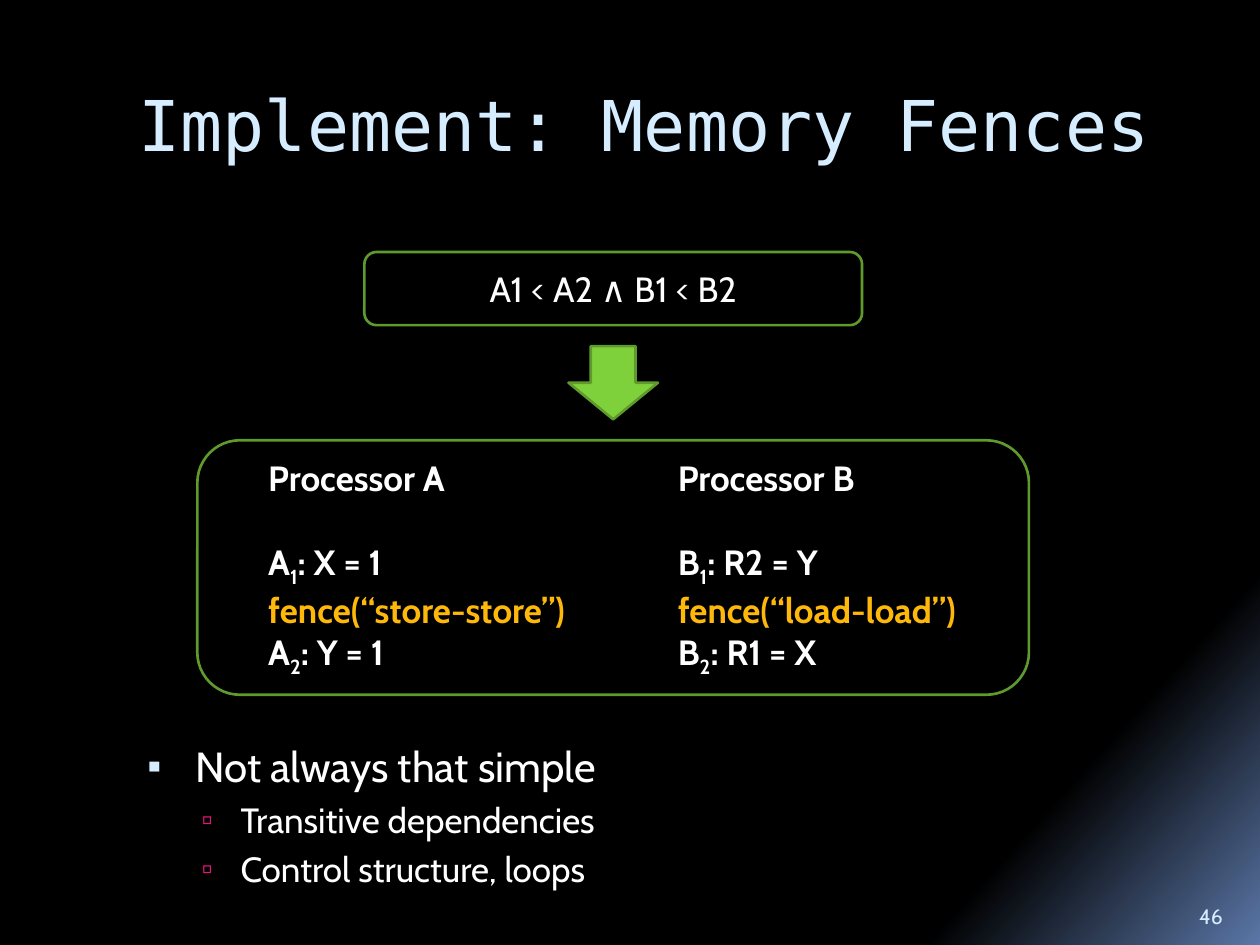
from lxml.etree import SubElement
from pptx import Presentation
from pptx.dml.color import RGBColor
from pptx.enum.shapes import MSO_SHAPE
from pptx.enum.text import MSO_ANCHOR, MSO_AUTO_SIZE, PP_ALIGN
from pptx.oxml.ns import qn
from pptx.util import Pt

COLORS = {
    "black": "000000", "glow": "5B77A8", "ice": "D6ECFF", "white": "FFFFFF",
    "amber": "FEB80A", "green": "7FD13B", "border": "5E9B2C", "pink": "EA157A",
}
BODY_FONT, TITLE_FONT = "Cabin", "DejaVu Sans Mono"

TITLE = "Implement: Memory Fences"
ORDERING = "A1 < A2 ∧ B1 < B2"
PAGE = "46"
PROCESSORS = [
    {"name": "B", "first": "R2 = Y", "fence": "load-load", "second": "R1 = X",
     "left": 380.2, "width": 174.2},
    {"name": "A", "first": "X = 1", "fence": "store-store", "second": "Y = 1",
     "left": 146.2, "width": 203.8},
]
CAVEATS = [
    (0, "Not always that simple"),
    (1, "Transitive dependencies"),
    (1, "Control structure, loops"),
]
BULLETS = [
    {"char": "▪", "color": "ice", "scale": 95, "margin": 32.4, "indent": -27.4, "size": 24, "before": 7},
    {"char": "▫", "color": "pink", "scale": 90, "margin": 58.3, "indent": -22.3, "size": 20, "before": 4},
]
CENTER, STACK_TOP, GAP = 350.4, 144, 12
ORDERING_SIZE, ARROW_SIZE, CODE_SIZE = (284.4, 41.8), (51.1, 41.8), (475.2, 145.4)
CODE_INSET = 5.8


def rgb(name):
    return RGBColor.from_string(COLORS[name])


def style(paragraph, size, color="white", face=BODY_FONT, bold=False):
    font = paragraph.font
    font.size, font.name, font.bold = Pt(size), face, bold
    font.color.rgb = rgb(color)


def place(shape, left, top, width, height):
    shape.left, shape.top, shape.width, shape.height = map(Pt, (left, top, width, height))


def add_outlined(shapes, preset, top, size, fill=None):
    width, height = size
    outlined = shapes.add_shape(preset, Pt(CENTER - width / 2), Pt(top), Pt(width), Pt(height))
    outlined.shadow.inherit = False
    if fill:
        outlined.fill.solid()
        outlined.fill.fore_color.rgb = rgb(fill)
    else:
        outlined.fill.background()
    outlined.line.color.rgb = rgb("border")
    outlined.line.width = Pt(1.5)
    return outlined


def add_statement(paragraph, processor, index, code):
    for text, baseline in ((processor, 0), (index, -25000), (f": {code}", 0)):
        run = paragraph.add_run()
        run.text = text
        if baseline:
            run.font._element.set("baseline", str(baseline))


def add_processor(shapes, processor, top):
    listing = shapes.add_textbox(Pt(processor["left"]), Pt(top), Pt(processor["width"]), Pt(128.2))
    frame = listing.text_frame
    frame.word_wrap = True
    heading = frame.paragraphs[0]
    first, fence, second = (frame.add_paragraph() for _ in range(3))
    heading.text = f"Processor {processor['name']}"
    first.space_before = Pt(24)
    add_statement(first, processor["name"], "1", processor["first"])
    fence.text = f"fence(“{processor['fence']}”)"
    add_statement(second, processor["name"], "2", processor["second"])
    for paragraph in (heading, first, fence, second):
        style(paragraph, 20, "amber" if paragraph is fence else "white", bold=True)


def add_bullet(paragraph, bullet):
    paragraph.space_before = Pt(bullet["before"])
    properties = paragraph._p.get_or_add_pPr()
    properties.set("marL", str(Pt(bullet["margin"])))
    properties.set("indent", str(Pt(bullet["indent"])))
    color = SubElement(properties, qn("a:buClr"))
    SubElement(color, qn("a:srgbClr"), val=COLORS[bullet["color"]])
    SubElement(properties, qn("a:buSzPct"), val=str(bullet["scale"] * 1000))
    SubElement(properties, qn("a:buChar"), char=bullet["char"])


def main():
    """Build the memory fences slide."""
    deck = Presentation()
    deck.slide_width, deck.slide_height = Pt(720), Pt(540)
    slide = deck.slides.add_slide(deck.slide_layouts[1])
    shapes = slide.shapes

    backdrop = slide.background.fill
    backdrop.gradient()
    backdrop.gradient_angle = 318
    for stop, (position, color) in zip(backdrop.gradient_stops, ((0.84, "black"), (1, "glow"))):
        stop.position = position
        stop.color.rgb = rgb(color)

    title, caveats = shapes.title, slide.placeholders[1]
    place(title, 72, 40.3, 612, 72)
    title.text_frame.text = TITLE
    title.text_frame.vertical_anchor = MSO_ANCHOR.TOP
    title.text_frame.margin_top = Pt(6.5)
    title.text_frame.auto_size = MSO_AUTO_SIZE.NONE
    heading = title.text_frame.paragraphs[0]
    heading.alignment = PP_ALIGN.LEFT
    style(heading, 40, "ice", TITLE_FONT)

    page = shapes.add_textbox(Pt(678.2), Pt(505.4), Pt(36), Pt(28.8)).text_frame
    page.word_wrap = True
    page.vertical_anchor = MSO_ANCHOR.BOTTOM
    page.text = PAGE
    style(page.paragraphs[0], 12, "ice")

    arrow_top = STACK_TOP + ORDERING_SIZE[1] + GAP
    code_top = arrow_top + ARROW_SIZE[1] + GAP
    code = shapes.add_group_shape()
    for processor in PROCESSORS:
        add_processor(code.shapes, processor, code_top + CODE_INSET)
    add_outlined(code.shapes, MSO_SHAPE.ROUNDED_RECTANGLE, code_top, CODE_SIZE)
    ordering = add_outlined(shapes, MSO_SHAPE.ROUNDED_RECTANGLE, STACK_TOP, ORDERING_SIZE).text_frame
    ordering.text = ORDERING
    ordering.vertical_anchor = MSO_ANCHOR.MIDDLE
    ordering.paragraphs[0].alignment = PP_ALIGN.CENTER
    style(ordering.paragraphs[0], 20)
    add_outlined(shapes, MSO_SHAPE.DOWN_ARROW, arrow_top, ARROW_SIZE, "green")

    place(caveats, 72, 419.8, 612, 103.7)
    caveats.text_frame.auto_size = MSO_AUTO_SIZE.NONE
    caveats.text_frame.text = "\n".join(text for _, text in CAVEATS)
    for paragraph, (level, _) in zip(caveats.text_frame.paragraphs, CAVEATS):
        paragraph.level = level
        add_bullet(paragraph, BULLETS[level])
        style(paragraph, BULLETS[level]["size"])

    deck.save("out.pptx")


if __name__ == "__main__":
    main()
